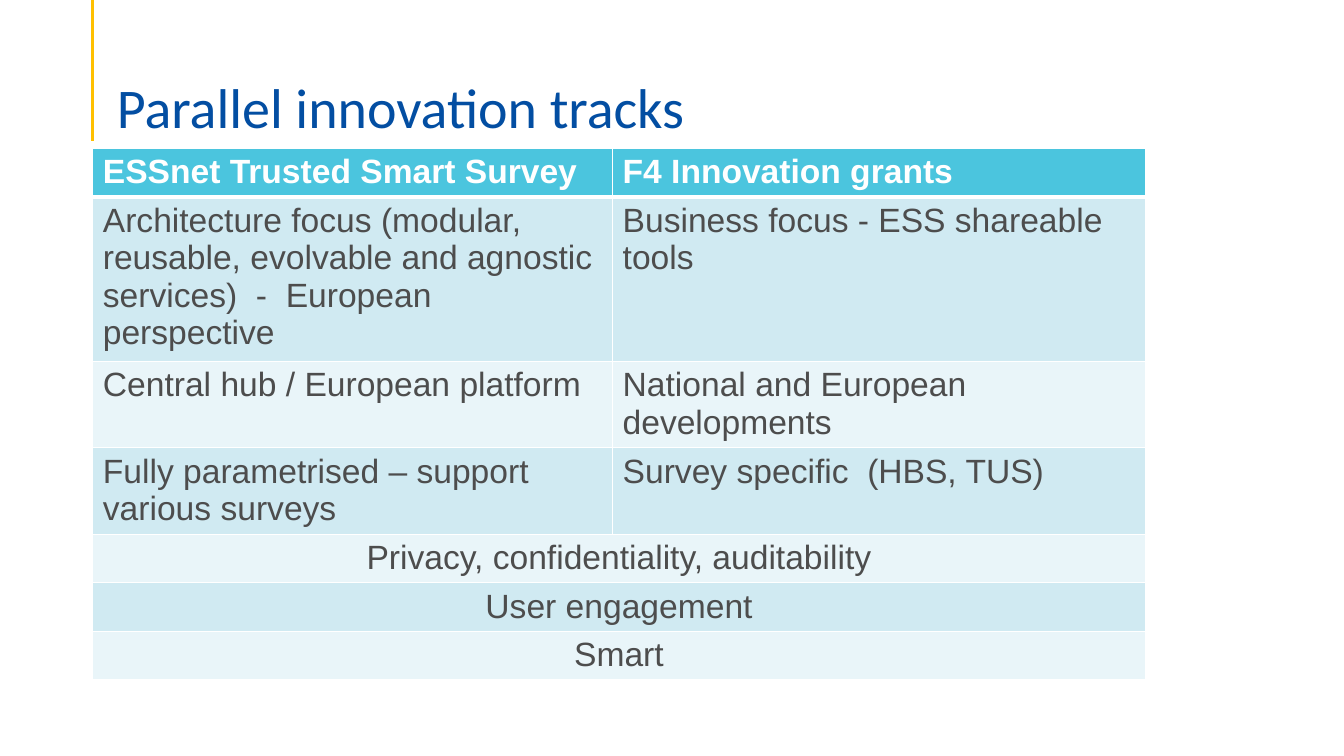
from lxml.etree import SubElement
from pptx import Presentation
from pptx.dml.color import RGBColor
from pptx.enum.shapes import MSO_CONNECTOR
from pptx.enum.text import MSO_ANCHOR, PP_ALIGN
from pptx.oxml.ns import qn
from pptx.util import Pt

COLORS = {
    "title": "034EA2", "accent": "FFC000", "header": "4BC5DE", "text": "4D4D4D",
    "band_dark": "D0EAF2", "band_light": "E9F5F9", "white": "FFFFFF",
}
ROWS = [
    ("ESSnet Trusted Smart Survey", "F4 Innovation grants"),
    ("Architecture focus (modular, reusable, evolvable and agnostic services)  -  European perspective",
     "Business focus - ESS shareable tools"),
    ("Central hub / European platform", "National and European developments"),
    ("Fully parametrised – support various surveys", "Survey specific  (HBS, TUS)"),
    ("Privacy, confidentiality, auditability",),
    ("User engagement",),
    ("Smart",),
]
ROW_HEIGHTS = [34.6, 117.4, 61.9, 61.9, 34.6, 34.6, 34.6]
COLUMN_SHARES = [0.494, 0.506]


def color(name):
    return RGBColor.from_string(COLORS[name])


def add_text(para, text, size, font_name, color_name, bold=False):
    span = para.add_run()
    span.text = text
    span.font.size = Pt(size)
    span.font.name = font_name
    span.font.bold = bold
    span.font.color.rgb = color(color_name)


def set_borders(cell, bottom_width):
    properties = cell._tc.get_or_add_tcPr()
    widths = {"a:lnL": 1, "a:lnR": 1, "a:lnT": 1, "a:lnB": bottom_width}
    for index, (tag, width) in enumerate(widths.items()):
        line = SubElement(properties, qn(tag), w=str(Pt(width)))
        fill = SubElement(line, qn("a:solidFill"))
        SubElement(fill, qn("a:srgbClr"), val=COLORS["white"])
        properties.insert(index, line)  # borders come before the fill


def add_title(page, left, top, width, height):
    # Accent line from the top edge down to the table
    line_x = left - 10
    line = page.shapes.add_connector(
        MSO_CONNECTOR.STRAIGHT, Pt(line_x), Pt(0), Pt(line_x), Pt(top + height + 0.8))
    line.line.color.rgb = color("accent")
    line.line.width = Pt(2.25)
    SubElement(line._element.spPr, qn("a:effectLst"))

    # Title text
    title = page.shapes.title
    title.left, title.top, title.width, title.height = Pt(left), Pt(top), Pt(width), Pt(height)
    box = title.text_frame
    box.word_wrap = True
    box.vertical_anchor = MSO_ANCHOR.BOTTOM
    box.margin_left = box.margin_right = Pt(7.2)
    box.margin_top, box.margin_bottom = Pt(3.6), Pt(0)
    para = box.paragraphs[0]
    para.alignment = PP_ALIGN.LEFT
    para.line_spacing = 0.9
    add_text(para, "Parallel innovation tracks", 40, "Calibri", "title")


def add_tracks_table(page, left, top, width):
    table = page.shapes.add_table(
        len(ROWS), len(COLUMN_SHARES), Pt(left), Pt(top), Pt(width), Pt(sum(ROW_HEIGHTS))).table
    for column, share in zip(table.columns, COLUMN_SHARES):
        column.width = Pt(round(width * share, 1))

    for row_index, (texts, height) in enumerate(zip(ROWS, ROW_HEIGHTS)):
        table.rows[row_index].height = Pt(height)
        is_header = row_index == 0
        shared = len(texts) == 1
        band = "header" if is_header else ("band_light", "band_dark")[row_index % 2]

        # Fill and borders for the whole row
        for column_index in range(len(COLUMN_SHARES)):
            cell = table.cell(row_index, column_index)
            cell.fill.solid()
            cell.fill.fore_color.rgb = color(band)
            set_borders(cell, 3 if is_header else 1)

        # Rows shared by both tracks span the columns
        if shared:
            table.cell(row_index, 0).merge(table.cell(row_index, 1))
        for column_index, text in enumerate(texts):
            para = table.cell(row_index, column_index).text_frame.paragraphs[0]
            para.alignment = PP_ALIGN.CENTER if shared else PP_ALIGN.LEFT
            add_text(para, text, 24, "Arial", "white" if is_header else "text", is_header)


def main():
    deck = Presentation()
    deck.slide_width, deck.slide_height = Pt(960), Pt(540)
    page = deck.slides.add_slide(deck.slide_layouts[5])
    add_title(page, 76.3, 38.2, 828, 61.9)
    add_tracks_table(page, 66.3, 106, 751.7)
    deck.save("out.pptx")


if __name__ == "__main__":
    main()
